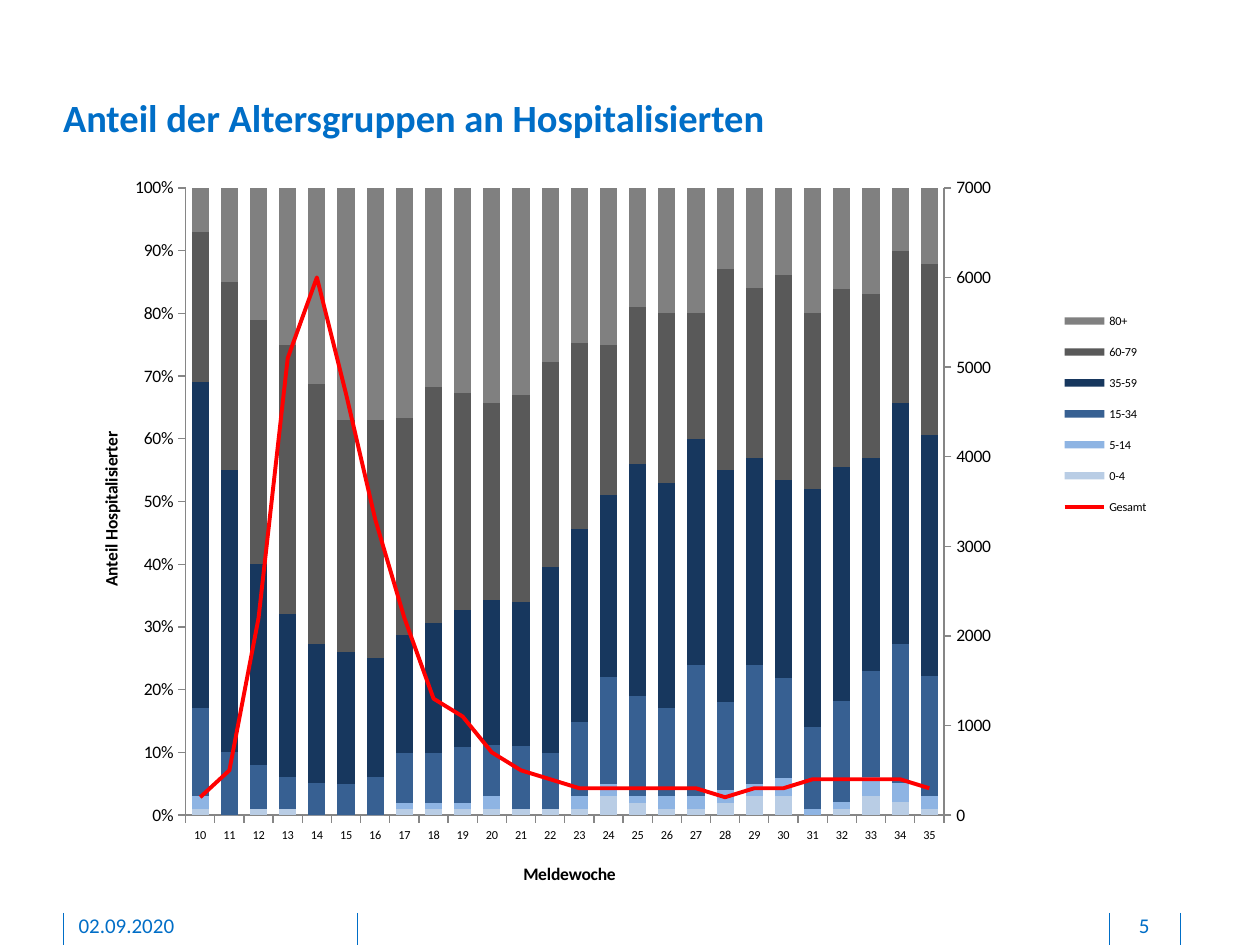
from dataclasses import dataclass

from lxml import etree
from pptx import Presentation
from pptx.chart.axis import ValueAxis
from pptx.chart.data import CategoryChartData
from pptx.dml.color import RGBColor
from pptx.enum.chart import XL_CHART_TYPE, XL_LEGEND_POSITION, XL_MARKER_STYLE, XL_TICK_MARK
from pptx.enum.shapes import MSO_CONNECTOR
from pptx.enum.text import PP_ALIGN
from pptx.oxml import parse_xml
from pptx.oxml.ns import nsdecls, qn
from pptx.util import Inches, Pt

STACKED = XL_CHART_TYPE.COLUMN_STACKED_100
RIGHT = XL_LEGEND_POSITION.RIGHT
PLAIN = XL_MARKER_STYLE.NONE
OUT = XL_TICK_MARK.OUTSIDE
STRAIGHT = MSO_CONNECTOR.STRAIGHT
LEFT, CENTER = PP_ALIGN.LEFT, PP_ALIGN.CENTER


@dataclass(frozen=True)
class Theme:
    font: str = "Calibri"
    blue: str = "006EC7"
    black: str = "000000"
    axis: str = "868686"
    red: str = "FF0000"
    head: int = 22
    foot: int = 12
    body: int = 10
    small: int = 7


THEME = Theme()
WIDE, HIGH = Inches(10), Inches(7.5)
WEEKS = [str(week) for week in range(10, 36)]
GROUPS = [
    ("0-4", "B9CDE5", [1, 0, 1, 1, 0, 0, 0, 1, 1, 1, 1, 1, 1, 1, 3, 2, 1, 1, 2, 3, 3, 0, 1, 3, 2, 1]),
    ("5-14", "8EB4E3", [2, 0, 0, 0, 0, 0, 0, 1, 1, 1, 2, 0, None, 2, 2, 1, 2, 2, 2, 2, 3, 1, 1, 3, 3, 2]),
    ("15-34", "376092", [14, 10, 7, 5, 5, 5, 6, 8, 8, 9, 8, 10, 9, 12, 17, 16, 14, 21, 14, 19, 16, 13, 16, 17, 22, 19]),
    ("35-59", "17375E", [52, 45, 32, 26, 22, 21, 19, 19, 21, 22, 23, 23, 30, 31, 29, 37, 36, 36, 37, 33, 32, 38, 37, 34, 38, 38]),
    ("60-79", "595959", [24, 30, 39, 43, 41, 37, 38, 35, 38, 35, 31, 33, 33, 30, 24, 25, 27, 20, 32, 27, 33, 28, 28, 26, 24, 27]),
    ("80+", "808080", [7, 15, 21, 25, 31, 37, 37, 37, 32, 33, 34, 33, 28, 25, 25, 19, 20, 20, 13, 16, 14, 20, 16, 17, 10, 12]),
]
TOTAL = [200, 500, 2200, 5100, 6000, 4700, 3300, 2200, 1300, 1100, 700, 500, 400,
         300, 300, 300, 300, 300, 200, 300, 300, 400, 400, 400, 400, 300]
LINE_XML = f"""<c:lineChart {nsdecls('c')}><c:grouping val="standard"/><c:varyColors val="0"/>
<c:marker val="1"/><c:axId val="501"/><c:axId val="502"/></c:lineChart>"""
WEEK_XML = f"""<c:catAx {nsdecls('c')}><c:axId val="501"/><c:scaling><c:orientation val="minMax"/></c:scaling>
<c:delete val="1"/><c:axPos val="b"/><c:majorTickMark val="none"/><c:minorTickMark val="none"/>
<c:tickLblPos val="nextTo"/><c:crossAx val="502"/><c:crosses val="autoZero"/></c:catAx>"""
COUNT_XML = f"""<c:valAx {nsdecls('c')}><c:axId val="502"/><c:scaling><c:orientation val="minMax"/></c:scaling>
<c:delete val="0"/><c:axPos val="r"/><c:numFmt formatCode="General" sourceLinked="0"/>
<c:majorTickMark val="out"/><c:minorTickMark val="none"/><c:tickLblPos val="nextTo"/>
<c:crossAx val="501"/><c:crosses val="max"/></c:valAx>"""


def color(code):
    return RGBColor.from_string(code)


def scale(box):
    left, top, width, height = box
    return [round(part) for part in (left * WIDE, top * HIGH, width * WIDE, height * HIGH)]


def style(font, size, code, bold=False):
    font.name, font.size, font.bold = THEME.font, Pt(size), bold
    font.color.rgb = color(code)


def add_text(slide, box, words, size, bold=False, align=LEFT):
    frame = slide.shapes.add_textbox(*scale(box)).text_frame
    frame.word_wrap = True
    frame.margin_left = frame.margin_top = frame.margin_right = frame.margin_bottom = 0
    line = frame.paragraphs[0]
    line.text, line.alignment = words, align
    style(line.font, size, THEME.blue, bold)


def add_foot(slide, box, date, page):
    left, top, width, height = box
    for share in (0, 0.264, 0.938, 1.002):
        x, y, _, drop = scale((left + share * width, top, 0, height))
        rule = slide.shapes.add_connector(STRAIGHT, x, y, x, y + drop)
        rule.line.color.rgb, rule.line.width = color(THEME.blue), Pt(0.5)
        etree.SubElement(rule._element.spPr, qn("a:effectLst"))
    for share, span, words, align in ((0.014, 0.23, date, LEFT), (0.939, 0.061, page, CENTER)):
        add_text(slide, (left + share * width, top, span * width, 0.8 * height), words, THEME.foot, align=align)


def set_place(parent, index, inner=False, **shares):
    for old in parent.findall(qn("c:layout")):
        parent.remove(old)
    target = '<c:layoutTarget val="inner"/>' if inner else ""
    modes = "".join(f'<c:{key}Mode val="edge"/>' for key in "xy")
    sizes = "".join(f'<c:{key} val="{value}"/>' for key, value in shares.items())
    parent.insert(index, parse_xml(
        f"<c:layout {nsdecls('c')}><c:manualLayout>{target}{modes}{sizes}</c:manualLayout></c:layout>"))


def set_axis(axis, size):
    axis.has_major_gridlines = False
    axis.major_tick_mark = OUT
    axis.format.line.color.rgb = color(THEME.axis)
    style(axis.tick_labels.font, size, THEME.black)


def name_axis(axis, words, x, y, turn=0):
    frame = axis.axis_title.text_frame
    frame.text = words
    style(frame.paragraphs[0].font, THEME.body, THEME.black, True)
    body = frame._txBody.bodyPr
    body.set("rot", str(turn * 60000))
    body.set("vert", "horz")
    set_place(axis.axis_title._element, 1, x=x, y=y)


def add_total(chart):
    bars = chart.plots[0]._element
    total = bars.findall(qn("c:ser"))[-1]
    for flag in total.findall(qn("c:invertIfNegative")):
        total.remove(flag)
    lines, weeks, counts = [parse_xml(xml) for xml in (LINE_XML, WEEK_XML, COUNT_XML)]
    lines.insert(2, total)
    bars.addnext(lines)
    last = chart.value_axis._element
    last.addnext(weeks)
    weeks.addnext(counts)
    set_axis(ValueAxis(counts), THEME.body)
    curve = chart.plots[1].series[0]
    curve.smooth, curve.marker.style = False, PLAIN
    curve.format.line.color.rgb, curve.format.line.width = color(THEME.red), Pt(2.25)


def add_graph(slide, box):
    data = CategoryChartData()
    data.categories = WEEKS
    for name, _, values in GROUPS:
        data.add_series(name, values)
    data.add_series("Gesamt", TOTAL)
    chart = slide.shapes.add_chart(STACKED, *scale(box), data).chart
    chart.has_title = False
    style(chart.font, THEME.body, THEME.black)
    bars = chart.plots[0]
    bars.gap_width, bars.overlap, bars.vary_by_categories = 70, 100, False
    for series, (_, code, _) in zip(bars.series, GROUPS):
        series.format.fill.solid()
        series.format.fill.fore_color.rgb = color(code)
    set_axis(chart.category_axis, THEME.small)
    set_axis(chart.value_axis, THEME.body)
    labels = chart.value_axis.tick_labels
    labels.number_format, labels.number_format_is_linked = "0%", False
    name_axis(chart.category_axis, "Meldewoche", 0.41, 0.96)
    name_axis(chart.value_axis, "Anteil Hospitalisierter", 0.03, 0.37, -90)
    add_total(chart)
    chart.has_legend = True
    chart.legend.position, chart.legend.include_in_layout = RIGHT, False
    style(chart.legend.font, THEME.small, THEME.black)
    set_place(chart.legend._element, 1, x=0.88, y=0.19, w=0.11, h=0.32)
    area = chart._chartSpace.chart.plotArea
    set_place(area, 0, inner=True, x=0.11, y=0.04, w=0.68, h=0.86)


def main():
    deck = Presentation()
    deck.slide_width, deck.slide_height = WIDE, HIGH
    slide = deck.slides.add_slide(deck.slide_layouts[6])
    left, width = 0.05, 0.885
    add_text(slide, (left, 0.1, width, 0.05), "Anteil der Altersgruppen an Hospitalisierten", THEME.head, True)
    add_graph(slide, (left, 0.168, width, 0.773))
    add_foot(slide, (left, 0.966, width, 0.034), "02.09.2020", "5")
    deck.save("out.pptx")


if __name__ == "__main__":
    main()
